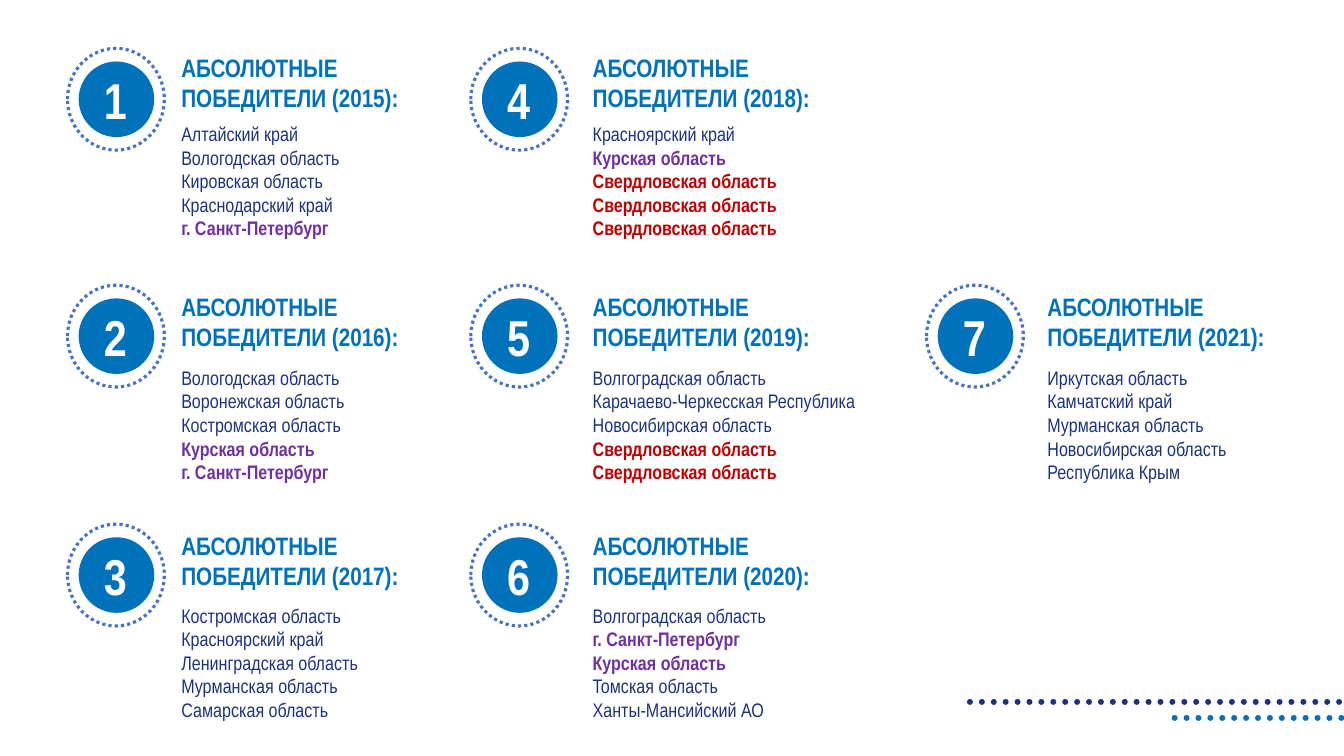
import dataclasses

import lxml.etree
import pptx
import pptx.dml.color
import pptx.enum.dml
import pptx.enum.shapes
import pptx.enum.text
import pptx.oxml.ns
import pptx.presentation
import pptx.slide
import pptx.text.text
import pptx.util

FONT = "Arial Narrow"
BLUE, NAVY, RING_BLUE, WHITE = "0072BC", "1B3281", "4472C4", "FFFFFF"
PURPLE, RED = "7030A0", "C00000"

# Repeat winners are bold and coloured
REPEAT_WINNERS = {
    "г. Санкт-Петербург": PURPLE,
    "Курская область": PURPLE,
    "Свердловская область": RED,
}

# Grid, in inches
BADGE_COLUMNS = (0.67, 4.67, 9.19)
TEXT_COLUMNS = (1.7, 5.78, 10.29)
BADGE_ROWS = (0.48, 2.83, 5.2)
HEADING_ROWS = (0.47, 2.84, 5.21)
LIST_ROWS = (1.16, 3.58, 5.94)
TEXT_WIDTH = 2.8


@dataclasses.dataclass
class Contest:
    number: int
    year: int
    column: int
    row: int
    winners: tuple[str, ...]


@dataclasses.dataclass
class DottedLine:
    start: float
    end: float
    top: float
    color: str


CONTESTS = (
    Contest(1, 2015, 0, 0, ("Алтайский край", "Вологодская область", "Кировская область",
                            "Краснодарский край", "г. Санкт-Петербург")),
    Contest(2, 2016, 0, 1, ("Вологодская область", "Воронежская область", "Костромская область",
                            "Курская область", "г. Санкт-Петербург")),
    Contest(3, 2017, 0, 2, ("Костромская область", "Красноярский край", "Ленинградская область",
                            "Мурманская область", "Самарская область")),
    Contest(4, 2018, 1, 0, ("Красноярский край", "Курская область", "Свердловская область",
                            "Свердловская область", "Свердловская область")),
    Contest(5, 2019, 1, 1, ("Волгоградская область", "Карачаево-Черкесская Республика",
                            "Новосибирская область", "Свердловская область",
                            "Свердловская область")),
    Contest(6, 2020, 1, 2, ("Волгоградская область", "г. Санкт-Петербург", "Курская область",
                            "Томская область", "Ханты-Мансийский АО")),
    Contest(7, 2021, 2, 1, ("Иркутская область", "Камчатский край", "Мурманская область",
                            "Новосибирская область", "Республика Крым")),
)

DOTTED_LINES = (
    DottedLine(9.62, 13.68, 6.96, NAVY),
    DottedLine(11.65, 13.7, 7.12, BLUE),
)


def rgb(color: str) -> pptx.dml.color.RGBColor:
    return pptx.dml.color.RGBColor.from_string(color)


def inches(*lengths: float) -> list[int]:
    return [pptx.util.Inches(length) for length in lengths]


def style(paragraph: pptx.text.text._Paragraph, size: float, color: str, bold: bool) -> None:
    for run in paragraph.runs:
        run.font.name = FONT
        run.font.size = pptx.util.Pt(size)
        run.font.bold = bold
        run.font.color.rgb = rgb(color)


def add_text_frame(slide: pptx.slide.Slide, left: float, top: float,
                   width: float, height: float) -> pptx.text.text.TextFrame:
    frame = slide.shapes.add_textbox(*inches(left, top, width, height)).text_frame
    frame.word_wrap = True
    frame.auto_size = pptx.enum.text.MSO_AUTO_SIZE.SHAPE_TO_FIT_TEXT
    return frame


def add_badge(slide: pptx.slide.Slide, number: int, left: float, top: float) -> None:
    oval = pptx.enum.shapes.MSO_SHAPE.OVAL
    ring = slide.shapes.add_shape(oval, *inches(left, top, 0.96, 1.01))
    ring.shadow.inherit = False
    ring.fill.background()
    ring.line.color.rgb = rgb(RING_BLUE)
    ring.line.width = pptx.util.Pt(2.25)
    ring.line.dash_style = pptx.enum.dml.MSO_LINE.ROUND_DOT

    disc = slide.shapes.add_shape(oval, *inches(left + 0.11, top + 0.13, 0.75, 0.75))
    disc.shadow.inherit = False
    disc.fill.solid()
    disc.fill.fore_color.rgb = rgb(BLUE)
    disc.line.fill.background()

    digit = add_text_frame(slide, left + 0.14, top + 0.16, 0.67, 0.71).paragraphs[0]
    digit.text = str(number)
    digit.alignment = pptx.enum.text.PP_ALIGN.CENTER
    style(digit, 36, WHITE, True)


def add_contest(slide: pptx.slide.Slide, contest: Contest) -> None:
    add_badge(slide, contest.number, BADGE_COLUMNS[contest.column], BADGE_ROWS[contest.row])
    left = TEXT_COLUMNS[contest.column]

    heading = add_text_frame(slide, left, HEADING_ROWS[contest.row], TEXT_WIDTH, 0.71)
    heading.paragraphs[0].text = f"АБСОЛЮТНЫЕ\nПОБЕДИТЕЛИ ({contest.year}):"
    style(heading.paragraphs[0], 18, BLUE, True)

    # The longest region name needs a wider box
    width = max(TEXT_WIDTH, 0.11 * max(map(len, contest.winners)))
    winners = add_text_frame(slide, left, LIST_ROWS[contest.row], width, 1.28)
    winners.text = "\n".join(contest.winners)
    for paragraph, region in zip(winners.paragraphs, contest.winners):
        style(paragraph, 14, REPEAT_WINNERS.get(region, NAVY), region in REPEAT_WINNERS)


def add_dotted_line(slide: pptx.slide.Slide, dotted: DottedLine) -> None:
    connector = slide.shapes.add_connector(
        pptx.enum.shapes.MSO_CONNECTOR.STRAIGHT,
        *inches(dotted.start, dotted.top, dotted.end, dotted.top))
    connector.line.color.rgb = rgb(dotted.color)
    connector.line.width = pptx.util.Pt(4.25)
    connector.line.dash_style = pptx.enum.dml.MSO_LINE.ROUND_DOT
    # Round dots, no shadow
    properties = connector._element.spPr
    properties.find(pptx.oxml.ns.qn("a:ln")).set("cap", "rnd")
    lxml.etree.SubElement(properties, pptx.oxml.ns.qn("a:effectLst"))


def main() -> None:
    deck: pptx.presentation.Presentation = pptx.Presentation()
    deck.slide_width, deck.slide_height = inches(13.33, 7.5)
    slide = deck.slides.add_slide(deck.slide_layouts[6])

    # Corner decoration
    for dotted in DOTTED_LINES:
        add_dotted_line(slide, dotted)

    # Winners by year
    for contest in CONTESTS:
        add_contest(slide, contest)

    deck.save("out.pptx")


if __name__ == "__main__":
    main()
